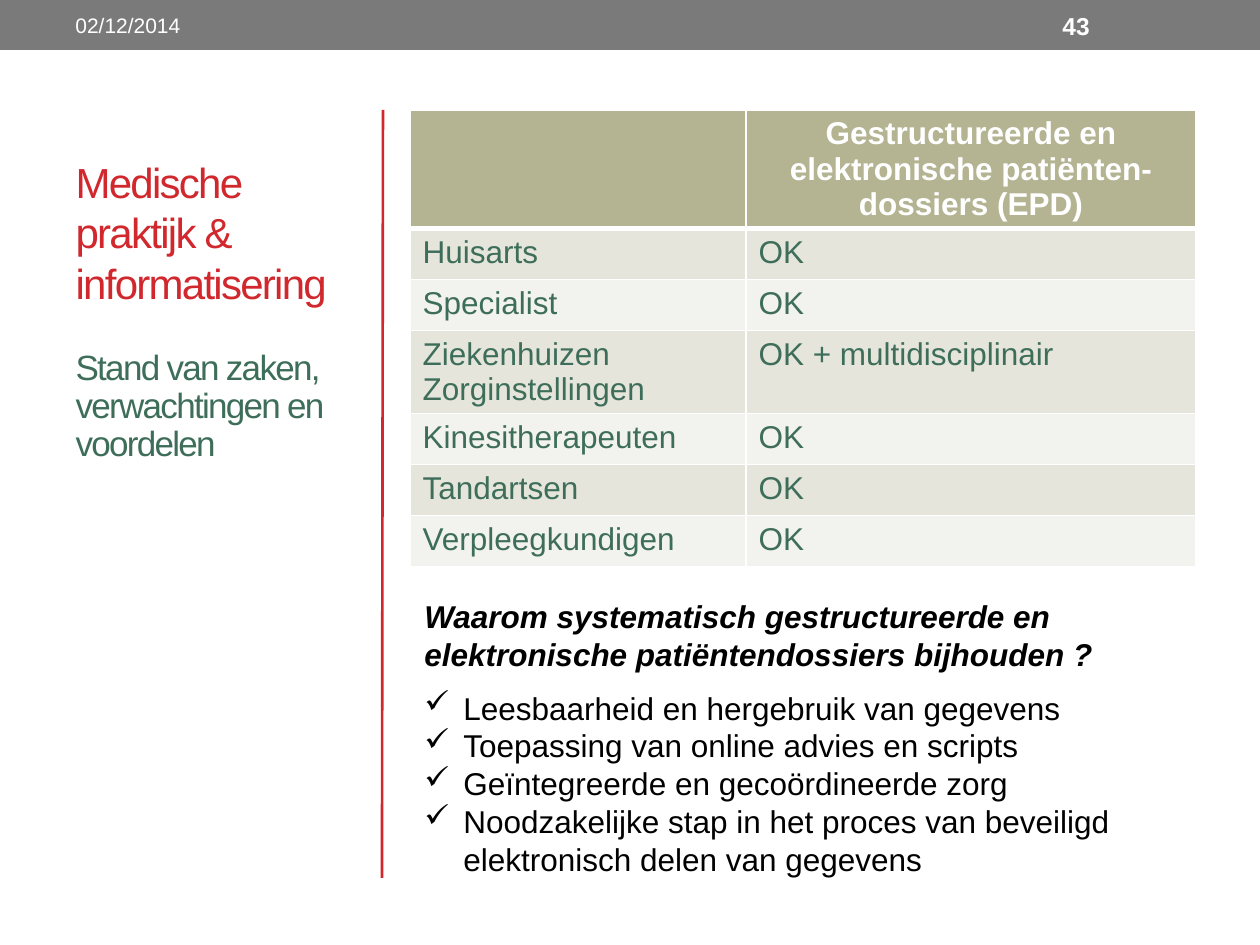
"""Build the slide on medical practice and computerisation."""
from dataclasses import dataclass

from lxml import etree
from pptx import Presentation
from pptx.dml.color import RGBColor
from pptx.enum.shapes import MSO_CONNECTOR, MSO_SHAPE
from pptx.enum.text import MSO_ANCHOR, MSO_AUTO_SIZE, PP_ALIGN
from pptx.oxml.ns import qn
from pptx.util import Emu, Pt

TOP, MIDDLE, BOTTOM = MSO_ANCHOR.TOP, MSO_ANCHOR.MIDDLE, MSO_ANCHOR.BOTTOM
LEFT, CENTER = PP_ALIGN.LEFT, PP_ALIGN.CENTER
NO_AUTOFIT = MSO_AUTO_SIZE.NONE
RECTANGLE, STRAIGHT = MSO_SHAPE.RECTANGLE, MSO_CONNECTOR.STRAIGHT

PX_PER_INCH = 126
FONT = "Arial"
COLORS = {
    "white": "FFFFFF", "black": "000000", "bar": "7A7A7A", "red": "D1282E",
    "green": "3E6E5A", "header": "B4B392", "odd": "E5E5DC", "even": "F2F2EE",
}
COLUMN_WIDTHS = (336, 450)
HEADER_HEIGHT, ROW_HEIGHT, LINE_HEIGHT = 117, 51, 32
ROWS = (
    ("", "Gestructureerde en elektronische patiënten- dossiers (EPD)"),
    ("Huisarts", "OK"),
    ("Specialist", "OK"),
    ("Ziekenhuizen\nZorginstellingen", "OK + multidisciplinair"),
    ("Kinesitherapeuten", "OK"),
    ("Tandartsen", "OK"),
    ("Verpleegkundigen", "OK"),
)
QUESTION = "Waarom systematisch gestructureerde en elektronische patiëntendossiers bijhouden ?"
REASONS = (
    "Leesbaarheid en hergebruik van gegevens",
    "Toepassing van online advies en scripts",
    "Geïntegreerde en gecoördineerde zorg",
    "Noodzakelijke stap in het proces van beveiligd elektronisch delen van gegevens",
)


@dataclass(frozen=True)
class Box:
    left: int
    top: int
    width: int
    height: int


@dataclass(frozen=True)
class Style:
    size: int
    color: str
    bold: bool = False
    italic: bool = False
    tracking: int = 0
    align: PP_ALIGN = LEFT


HEADER_STYLE = Style(18, "white", bold=True, align=CENTER)
CELL_STYLE = Style(18, "green")


def px(length: int) -> Emu:
    return Emu(round(length * 914400 / PX_PER_INCH))


def rgb(name: str) -> RGBColor:
    return RGBColor.from_string(COLORS[name])


def format_paragraph(paragraph, style: Style) -> None:
    paragraph.alignment = style.align
    for span in paragraph.runs:
        font = span.font
        font.name, font.size = FONT, Pt(style.size)
        font.bold, font.italic = style.bold, style.italic
        font.color.rgb = rgb(style.color)
        if style.tracking:
            font._element.set("spc", str(style.tracking * 100))


def set_bullet(paragraph, symbol: str = "", indent: int = 0) -> None:
    properties = paragraph._p.get_or_add_pPr()
    properties.set("marL", str(px(indent)))
    properties.set("indent", str(-px(indent)))
    if symbol:
        etree.SubElement(properties, qn("a:buChar"), char=symbol)
    else:
        etree.SubElement(properties, qn("a:buNone"))


def fill_text(shape, box: Box, text: str, style: Style, anchor: MSO_ANCHOR = TOP):
    shape.left, shape.top = px(box.left), px(box.top)
    shape.width, shape.height = px(box.width), px(box.height)
    frame = shape.text_frame
    frame.text = text
    frame.word_wrap, frame.auto_size = True, NO_AUTOFIT
    frame.vertical_anchor = anchor
    for paragraph in frame.paragraphs:
        format_paragraph(paragraph, style)
    return frame


def add_text(page, box: Box, text: str, style: Style, anchor: MSO_ANCHOR = TOP):
    return fill_text(page.shapes.add_textbox(0, 0, 0, 0), box, text, style, anchor)


def add_bar(page, box: Box) -> None:
    bar = page.shapes.add_shape(
        RECTANGLE, px(box.left), px(box.top), px(box.width), px(box.height))
    bar.shadow.inherit = False
    bar.fill.solid()
    bar.fill.fore_color.rgb = rgb("bar")
    bar.line.fill.background()


def add_divider(page) -> None:
    divider = page.shapes.add_connector(STRAIGHT, px(383), px(110), px(382), px(878))
    divider.line.color.rgb, divider.line.width = rgb("red"), Pt(1.5)
    etree.SubElement(divider._element.spPr, qn("a:effectLst"))


def set_borders(cell, row: int) -> None:
    properties = cell._tc.get_or_add_tcPr()
    widths = {"L": 1, "R": 1, "T": 3 if row == 1 else 1, "B": 3 if row == 0 else 1}
    for side, width in widths.items():
        line = etree.SubElement(properties, qn(f"a:ln{side}"), w=str(Pt(width)))
        fill = etree.SubElement(line, qn("a:solidFill"))
        etree.SubElement(fill, qn("a:srgbClr"), val=COLORS["white"])


def add_status_table(page, left: int, top: int) -> None:
    heights = [HEADER_HEIGHT] + [
        ROW_HEIGHT + LINE_HEIGHT * name.count("\n") for name, _ in ROWS[1:]]
    table = page.shapes.add_table(
        len(ROWS), len(COLUMN_WIDTHS), px(left), px(top),
        px(sum(COLUMN_WIDTHS)), px(sum(heights))).table
    for column, width in zip(table.columns, COLUMN_WIDTHS):
        column.width = px(width)
    for row, (texts, height) in enumerate(zip(ROWS, heights)):
        table.rows[row].height = px(height)
        fill = "header" if row == 0 else "odd" if row % 2 else "even"
        for column, text in enumerate(texts):
            cell = table.cell(row, column)
            cell.text = text
            set_borders(cell, row)
            cell.fill.solid()
            cell.fill.fore_color.rgb = rgb(fill)
            for paragraph in cell.text_frame.paragraphs:
                format_paragraph(paragraph, CELL_STYLE if row else HEADER_STYLE)


def add_reasons(page) -> None:
    frame = add_text(page, Box(412, 591, 784, 297), QUESTION,
                     Style(18, "black", bold=True, italic=True))
    for number, reason in enumerate(REASONS):
        paragraph = frame.add_paragraph()
        paragraph.text = reason
        paragraph.space_before = Pt(0 if number else 9)
        format_paragraph(paragraph, Style(18, "black"))
        set_bullet(paragraph, "✓", 39)


def main() -> None:
    deck = Presentation()
    deck.slide_width, deck.slide_height = px(1260), px(945)
    page = deck.slides.add_slide(deck.slide_layouts[1])
    add_bar(page, Box(0, 0, 1260, 50))
    add_divider(page)
    fill_text(page.shapes.title, Box(63, 110, 295, 204),
              "Medische praktijk & informatisering",
              Style(24, "red", tracking=-1), BOTTOM)
    body = fill_text(page.placeholders[1], Box(63, 344, 295, 534),
                     "Stand van zaken, verwachtingen en voordelen",
                     Style(20, "green", tracking=-1))
    summary = body.paragraphs[0]
    summary.line_spacing, summary.space_before = 0.9, Pt(0)
    set_bullet(summary)
    add_status_table(page, 410, 110)
    add_reasons(page)
    add_text(page, Box(1050, 3, 147, 45), "43", Style(14, "white", bold=True), MIDDLE)
    add_text(page, Box(63, 3, 399, 45), "02/12/2014", Style(12, "white"), MIDDLE)
    deck.save("out.pptx")


if __name__ == "__main__":
    main()
